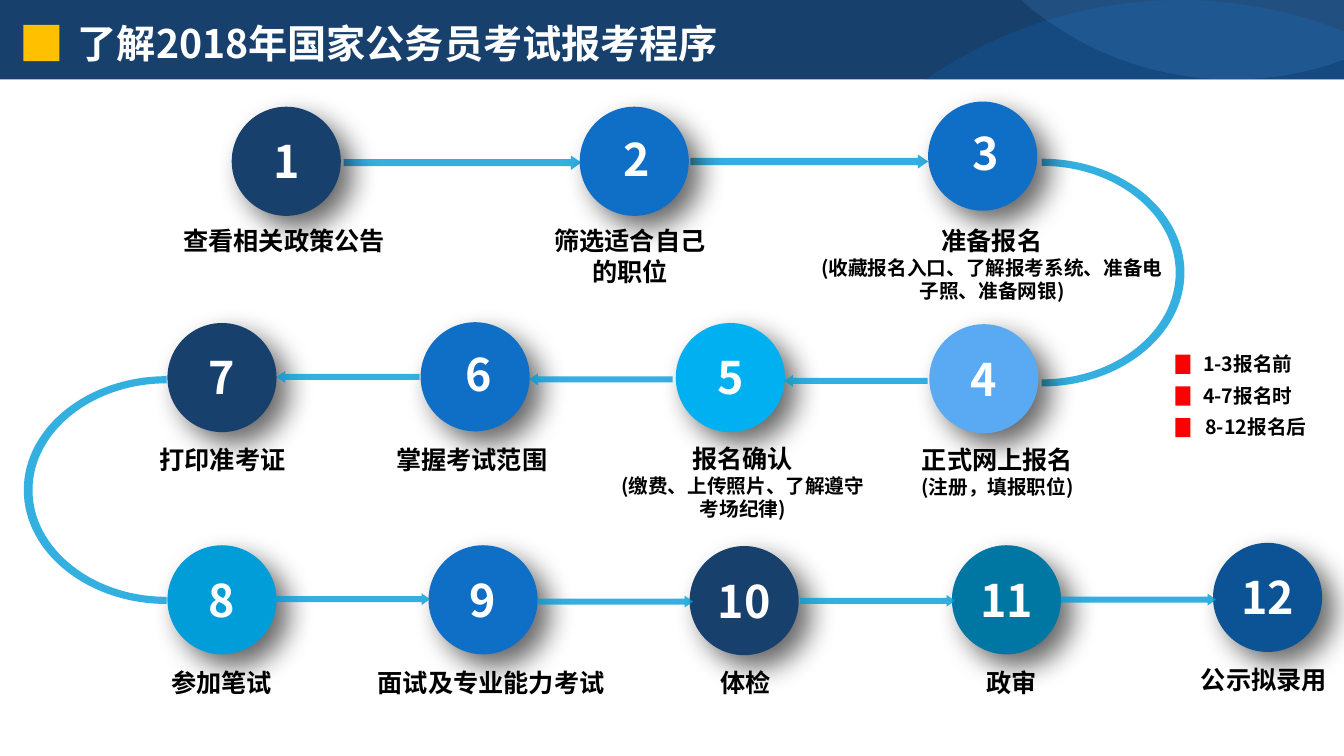
from dataclasses import dataclass

from lxml import etree
from pptx import Presentation
from pptx.dml.color import RGBColor
from pptx.enum.shapes import MSO_SHAPE
from pptx.enum.text import PP_ALIGN
from pptx.oxml.ns import qn
from pptx.shapes.autoshape import Shape
from pptx.shapes.shapetree import GroupShapes, SlideShapes
from pptx.util import Cm, Pt

RECTANGLE, OVAL, ARROW = MSO_SHAPE.RECTANGLE, MSO_SHAPE.OVAL, MSO_SHAPE.RIGHT_ARROW
LEFT, CENTER = PP_ALIGN.LEFT, PP_ALIGN.CENTER

FONT = "Noto Sans CJK SC"
COLORS = {
    "navy": "17406D", "blue": "0F6FC6", "light": "59AAF2", "cyan": "00B0F0",
    "sky": "009DD9", "teal": "0076A3", "royal": "0B5394", "amber": "FFC000",
    "red": "FF0000", "white": "FFFFFF", "black": "000000",
}
PAGE_WIDTH, PAGE_HEIGHT, HEADER_HEIGHT = 33.87, 19.05, 2.0
CIRCLE_SIZE = 2.75
ROUNDNESS = 0.55  # control distance of a quarter ellipse, as a share of its radius

Point = tuple[float, float]
Segment = tuple[Point, ...]  # one point: a line; three points: a cubic curve


@dataclass
class Step:
    color: str
    left: float
    top: float
    label_left: float
    label_top: float
    label_width: float
    title: str
    detail: str = ""
    nudge: float = 0  # shift of the number to the right and up


@dataclass
class Arrow:
    left: float
    top: float
    width: float
    height: float = 0.3
    leftward: bool = False


@dataclass
class Legend:
    text: str
    left: float
    width: float


STEPS = [
    Step("navy", 5.84, 2.69, 4.11, 5.56, 6.1, "查看相关政策公告"),
    Step("blue", 14.61, 2.69, 13.46, 5.56, 4.83, "筛选适合自己的职位", nudge=0.05),
    Step("blue", 23.39, 2.56, 20.35, 5.56, 9.3, "准备报名",
         "(收藏报名入口、了解报考系统、准备电子照、准备网银)", 0.08),
    Step("light", 23.42, 8.17, 22.45, 11.07, 5.38, "正式网上报名", "(注册，填报职位)"),
    Step("cyan", 17.03, 8.14, 15.38, 11.05, 6.68, "报名确认",
         "(缴费、上传照片、了解遵守考场纪律)"),
    Step("blue", 10.6, 8.12, 8.79, 11.07, 6.2, "掌握考试范围", nudge=0.08),
    Step("navy", 4.22, 8.14, 2.51, 11.07, 6.2, "打印准考证"),
    Step("sky", 4.22, 13.74, 2.49, 16.7, 6.2, "参加笔试"),
    Step("blue", 10.8, 13.74, 8.82, 16.7, 7.11, "面试及专业能力考试"),
    Step("navy", 17.38, 13.76, 15.7, 16.7, 6.2, "体检"),
    Step("teal", 23.99, 13.74, 23.47, 16.68, 4.06, "政审"),
    Step("royal", 30.57, 13.68, 29.82, 16.61, 4.06, "公示拟录用"),
]
TOP_ARROWS = [Arrow(8.66, 3.92, 5.99, 0.36), Arrow(17.4, 3.89, 5.99, 0.36)]
LOWER_ARROWS = [
    Arrow(19.77, 9.45, 3.61, leftward=True),
    Arrow(13.34, 9.41, 3.61, leftward=True),
    Arrow(6.97, 9.35, 3.61, leftward=True),
    Arrow(6.93, 14.95, 3.91), Arrow(13.56, 15.01, 3.91),
    Arrow(20.16, 14.99, 3.91), Arrow(26.74, 14.96, 3.91),
]
LEGENDS = [
    Legend("1-3报名前", 29.91, 3.07),
    Legend("4-7报名时", 29.91, 3.07),
    Legend("8-12报名后", 29.77, 3.76),
]


def paint(shape: Shape, color: str, opacity: int = 100) -> None:
    shape.shadow.inherit = False
    shape.line.fill.background()
    shape.fill.solid()
    shape.fill.fore_color.rgb = RGBColor.from_string(COLORS[color])
    if opacity < 100:
        value = shape._element.spPr.find(f".//{qn('a:srgbClr')}")
        etree.SubElement(value, qn("a:alpha"), val=str(opacity * 1000))


def add_block(shapes: SlideShapes | GroupShapes, kind: MSO_SHAPE, left: float, top: float,
              width: float, height: float, color: str, opacity: int = 100) -> Shape:
    block = shapes.add_shape(kind, Cm(left), Cm(top), Cm(width), Cm(height))
    paint(block, color, opacity)
    return block


def add_outline(shapes: SlideShapes | GroupShapes, start: Point, segments: list[Segment],
                color: str, opacity: int) -> None:
    """Draw a closed outline; every three-point segment becomes a cubic curve."""
    builder = shapes.build_freeform(Cm(start[0]), Cm(start[1]))
    points = [(Cm(x), Cm(y)) for segment in segments for x, y in segment]
    builder.add_line_segments(points, close=True)
    shape = builder.convert_to_shape()
    lines = iter(shape._element.spPr.findall(f".//{qn('a:lnTo')}"))
    for segment in segments:
        steps = [next(lines) for _ in segment]
        if len(steps) == 3:
            curve = etree.Element(qn("a:cubicBezTo"))
            steps[0].addprevious(curve)
            for step in steps:
                curve.append(step[0])
                step.getparent().remove(step)
    paint(shape, color, opacity)


def add_bend(shapes: SlideShapes, x: float, y: float, side: int) -> None:
    """Draw a half-ellipse band that bulges right (side 1) or left (side -1)."""

    def half(width: float, height: float) -> list[Segment]:
        """Go from (x, y - height) round to (x, y + height)."""
        near, far = x + side * width * ROUNDNESS, x + side * width
        rise = height * ROUNDNESS
        return [((near, y - height), (far, y - rise), (far, y)),
                ((far, y + rise), (near, y + height), (x, y + height))]

    inner_height, outer_height = 2.69, 2.87
    segments = half(3.38, inner_height) + [((x, y + outer_height),)]
    segments += half(3.6, -outer_height) + [((x, y - inner_height),)]
    add_outline(shapes, (x, y - inner_height), segments, "sky", 80)


def add_text(shapes: SlideShapes, left: float, top: float, width: float, height: float,
             lines: list[tuple[str, int]], color: str, alignment: PP_ALIGN = CENTER) -> None:
    box = shapes.add_textbox(Cm(left), Cm(top), Cm(width), Cm(height))
    frame = box.text_frame
    frame.word_wrap = True
    for index, (text, size) in enumerate(lines):
        para = frame.add_paragraph() if index else frame.paragraphs[0]
        para.alignment = alignment
        para.add_run().text = text
        font = para.font
        font.name, font.size, font.bold = FONT, Pt(size), True
        font.color.rgb = RGBColor.from_string(COLORS[color])
        defaults = para._p.pPr.find(qn("a:defRPr"))
        etree.SubElement(defaults, qn("a:ea"), typeface=FONT)


def add_header(shapes: SlideShapes) -> None:
    banner = shapes.add_group_shape().shapes
    add_block(banner, RECTANGLE, 0, 0, PAGE_WIDTH, HEADER_HEIGHT, "navy")
    add_outline(banner, (29.74, 0), [
        ((31.19, 0), (32.59, 0.28), (PAGE_WIDTH, 0.79)),
        ((PAGE_WIDTH, HEADER_HEIGHT),), ((23.34, HEADER_HEIGHT),),
        ((25.17, 0.74), (27.38, 0), (29.74, 0))], "blue", 23)
    add_outline(banner, (PAGE_WIDTH, 0), [
        ((PAGE_WIDTH, 1.5),),
        ((33, 1.83), (32.08, HEADER_HEIGHT), (31.04, HEADER_HEIGHT)),
        ((29.01, HEADER_HEIGHT), (27.15, 1.24), (25.73, 0))], "light", 15)
    add_text(shapes, 1.71, 0.37, 18.47, 1.45,
             [("了解2018年国家公务员考试报考程序", 28)], "white", LEFT)
    add_block(shapes, RECTANGLE, 0.59, 0.63, 0.91, 0.91, "amber")


def add_arrow(shapes: SlideShapes, arrow: Arrow) -> None:
    shape = add_block(shapes, ARROW, arrow.left, arrow.top, arrow.width, arrow.height, "sky", 80)
    shape.adjustments[0], shape.adjustments[1] = 0.5, 0.72
    if arrow.leftward:
        shape._element.spPr.xfrm.set("flipH", "1")


def add_step(shapes: SlideShapes, number: int, step: Step) -> None:
    circle = add_block(shapes, OVAL, step.left, step.top, CIRCLE_SIZE, CIRCLE_SIZE, step.color)
    effects = circle._element.spPr.find(qn("a:effectLst"))
    shadow = etree.SubElement(effects, qn("a:outerShdw"), blurRad=str(Pt(20)),
                              dist=str(Pt(12)), dir=str(45 * 60000), rotWithShape="0")
    shade = etree.SubElement(shadow, qn("a:srgbClr"), val=COLORS["black"])
    etree.SubElement(shade, qn("a:alpha"), val="60000")
    width, height = (1.47 if number < 10 else 2.0), 1.63
    add_text(shapes, step.left + (CIRCLE_SIZE - width) / 2 + step.nudge,
             step.top + (CIRCLE_SIZE - height) / 2 - step.nudge,
             width, height, [(str(number), 32)], "white")
    lines = [(step.title, 18)] + ([(step.detail, 14)] if step.detail else [])
    add_text(shapes, step.label_left, step.label_top, step.label_width,
             2.24 if step.detail else 1.02, lines, "black")


def main() -> None:
    deck = Presentation()
    deck.slide_width, deck.slide_height = Cm(PAGE_WIDTH), Cm(PAGE_HEIGHT)
    shapes = deck.slides.add_slide(deck.slide_layouts[6]).shapes
    add_header(shapes)
    add_bend(shapes, 26.25, 6.87, 1)
    for arrow in TOP_ARROWS:
        add_arrow(shapes, arrow)
    for number, step in enumerate(STEPS, start=1):
        add_step(shapes, number, step)
    add_bend(shapes, 4.2, 12.35, -1)
    for arrow in LOWER_ARROWS:
        add_arrow(shapes, arrow)
    for row, legend in enumerate(LEGENDS):
        add_block(shapes, RECTANGLE, 29.62, 8.94 + 0.8 * row, 0.38, 0.48, "red")
        add_text(shapes, legend.left, 8.75 + 0.79 * row, legend.width, 0.86,
                 [(legend.text, 14)], "black")
    deck.save("out.pptx")


if __name__ == "__main__":
    main()
